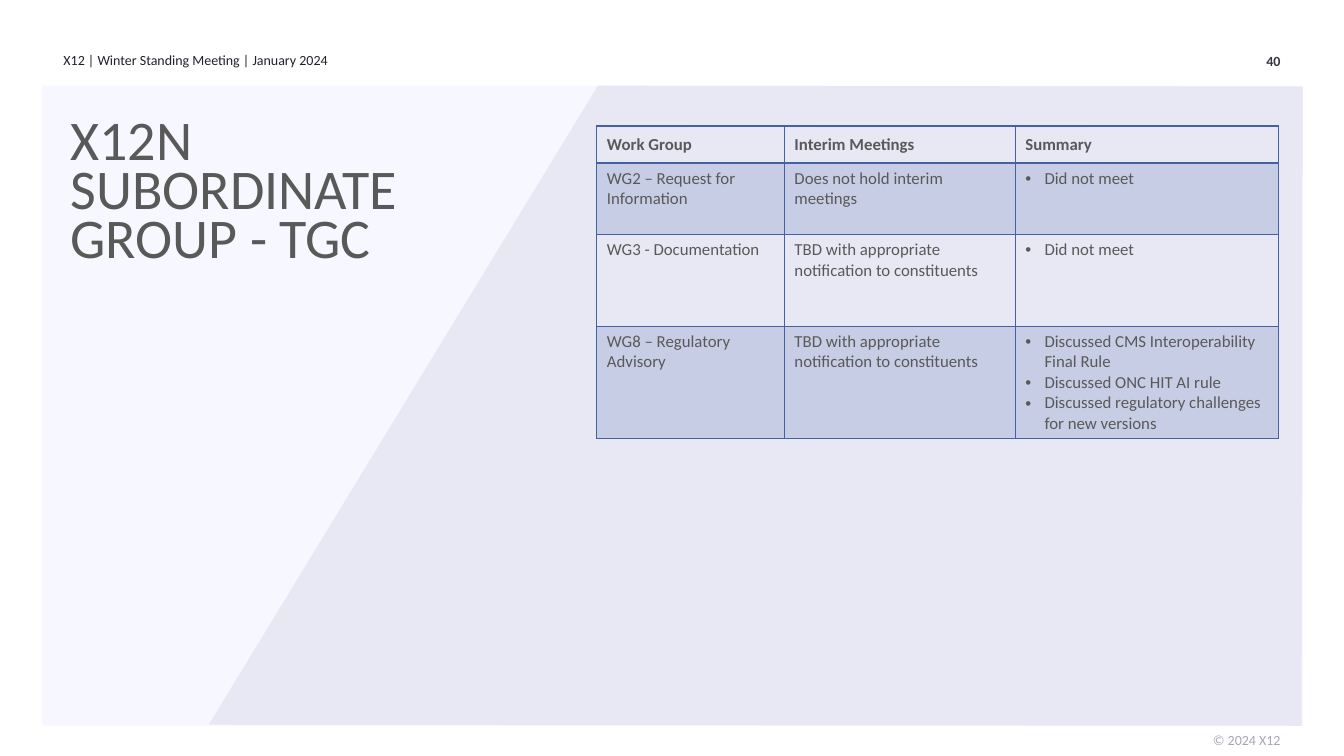
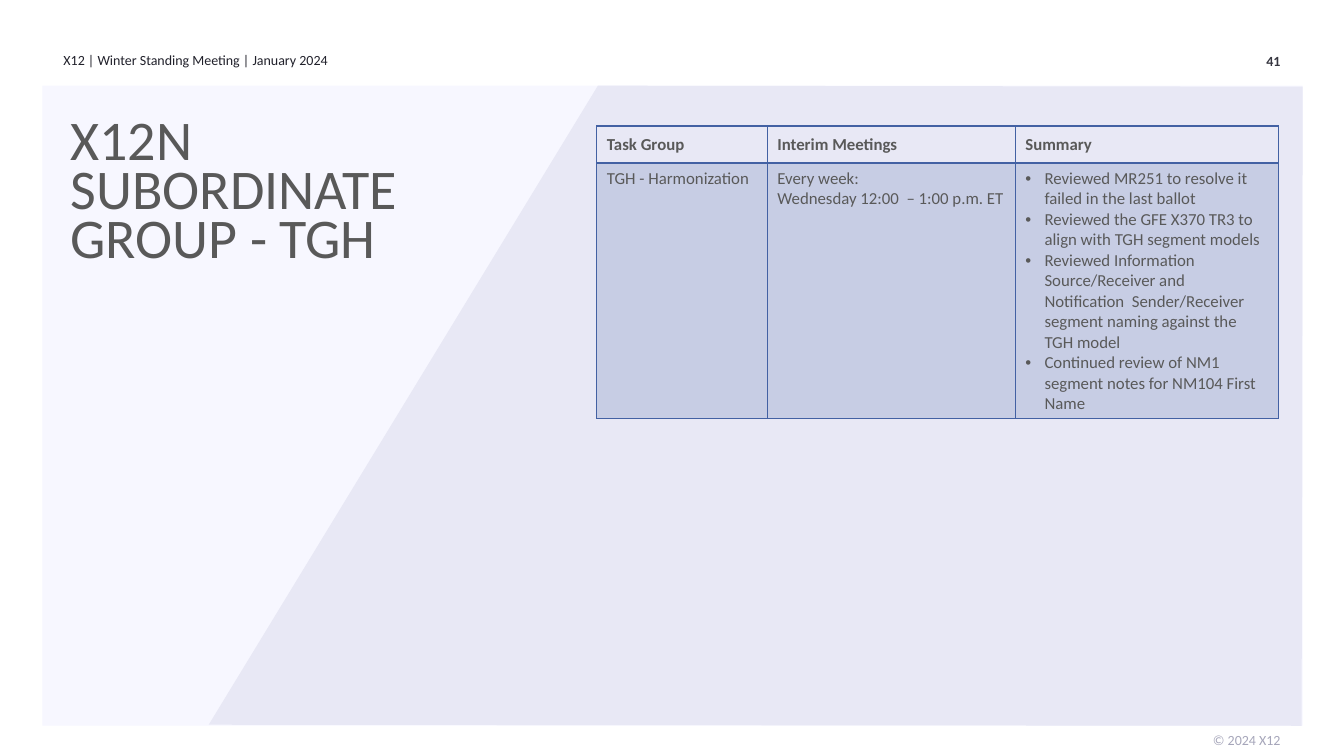
from lxml.etree import SubElement
from pptx import Presentation
from pptx.dml.color import RGBColor
from pptx.enum.shapes import MSO_SHAPE as Shape
from pptx.enum.text import MSO_ANCHOR as Anchor, PP_ALIGN as Align
from pptx.oxml.ns import qn
from pptx.util import Inches, Pt

FONT = "Calibri"
WHITE = RGBColor(0xFF, 0xFF, 0xFF)
PANEL = RGBColor(0xF7, 0xF7, 0xFF)
WEDGE = RGBColor(0xE8, 0xE8, 0xF5)
BLUE = RGBColor(0x43, 0x61, 0xA3)
GREY = RGBColor(0x59, 0x59, 0x59)
INK = RGBColor(0x21, 0x21, 0x2B)
NUMBER_INK = RGBColor(0x36, 0x36, 0x40)
PALE_INK = RGBColor(0xA6, 0xA6, 0xBA)

TITLE_STYLE = {"size": Pt(40), "color": GREY}
HEADER_STYLE = {"size": Pt(10), "color": INK}
NUMBER_STYLE = {"size": Pt(10), "color": NUMBER_INK, "bold": True}
FOOTER_STYLE = {"size": Pt(10), "color": PALE_INK}
HEAD_CELL_STYLE = {"size": Pt(12), "color": GREY, "bold": True}
BODY_CELL_STYLE = {"size": Pt(12), "color": GREY, "bold": False}

PANEL_BOX = (0.42, 0.85, 12.5, 6.35)
TITLE_BOX = (0.7, 1.22, 3.69, 1.9)
HEADER_BOX = (0.63, 0.51, 4.5, 0.25)
NUMBER_BOX = (11.19, 0.52, 1.51, 0.25)
FOOTER_BOX = (11.19, 7.26, 1.51, 0.25)
TABLE_CORNER = (5.92, 1.25)

MEETING = "X12 | Winter Standing Meeting | January 2024"
COPYRIGHT = "© 2024 X12"
TBD = "TBD with appropriate notification to constituents"

# Each cell is a list of paragraphs; the last column is bulleted.
GROUPS = [
    {
        "number": 40,
        "title": "X12N SUBORDINATE GROUP - TGC",
        "heads": ["Work Group", "Interim Meetings", "Summary"],
        "widths": [1.86, 2.29, 2.61],
        "heights": [0.37, 0.71, 0.91, 1.11],
        "rows": [
            [["WG2 – Request for Information"],
             ["Does not hold interim meetings"],
             ["Did not meet"]],
            [["WG3 - Documentation"], [TBD], ["Did not meet"]],
            [["WG8 – Regulatory Advisory"], [TBD],
             ["Discussed CMS Interoperability Final Rule",
              "Discussed ONC HIT AI rule",
              "Discussed regulatory challenges for new versions"]],
        ],
    },
    {
        "number": 41,
        "title": "X12N SUBORDINATE GROUP - TGH",
        "heads": ["Task Group", "Interim Meetings", "Summary"],
        "widths": [1.69, 2.46, 2.61],
        "heights": [0.37, 2.53],
        "rows": [
            [["TGH - Harmonization"],
             ["Every week:", "Wednesday 12:00  – 1:00 p.m. ET"],
             ["Reviewed MR251 to resolve it failed in the last ballot",
              "Reviewed the GFE X370 TR3 to align with TGH segment models",
              "Reviewed Information Source/Receiver and Notification  "
              "Sender/Receiver segment naming against the TGH model",
              "Continued review of NM1 segment notes for NM104 First Name"]],
        ],
    },
]


def style_font(font, style):
    font.name = FONT
    for key, value in style.items():
        if key == "color":
            font.color.rgb = value
        else:
            setattr(font, key, value)


def paint(shape, color):
    shape.shadow.inherit = False
    shape.fill.solid()
    shape.fill.fore_color.rgb = color
    shape.line.fill.background()


def add_label(slide, bounds, text, style, **layout):
    """Add a margin-free text box; layout holds paragraph settings."""
    box = slide.shapes.add_textbox(*map(Inches, bounds))
    frame = box.text_frame
    frame.word_wrap = True
    for side in ("left", "top", "right", "bottom"):
        setattr(frame, f"margin_{side}", 0)
    para = frame.paragraphs[0]
    for key, value in layout.items():
        setattr(para, key, value)
    span = para.add_run()
    span.text = text
    style_font(span.font, style)


def add_backdrop(slide, bounds):
    """Draw the pale panel with a slanted wedge filling its right side."""
    left, top, width, height = bounds
    panel = slide.shapes.add_shape(Shape.RECTANGLE, *map(Inches, bounds))
    paint(panel, PANEL)
    right, bottom = left + width, top + height
    corners = [(left + 1.65, bottom - 0.01), (left + 5.51, top),
               (right, top + 0.01), (right - 0.01, bottom)]
    points = [(Inches(x), Inches(y)) for x, y in corners]
    outline = slide.shapes.build_freeform(*points[0])
    outline.add_line_segments(points[1:], close=True)
    paint(outline.convert_to_shape(), WEDGE)


def add_frame(slide, number):
    """Draw what every slide shares: backdrop, header, number and footer."""
    fill = slide.background.fill
    fill.solid()
    fill.fore_color.rgb = WHITE
    add_backdrop(slide, PANEL_BOX)
    add_label(slide, HEADER_BOX, MEETING, HEADER_STYLE)
    add_label(slide, NUMBER_BOX, str(number), NUMBER_STYLE, alignment=Align.RIGHT)
    add_label(slide, FOOTER_BOX, COPYRIGHT, FOOTER_STYLE, alignment=Align.RIGHT)


def set_borders(cell, **widths):
    """Give the cell blue borders of 1 pt, or of the width named by side."""
    props = cell._tc.get_or_add_tcPr()
    for side in "LRTB":
        width = Pt(widths.get(side, 1))
        line = SubElement(props, qn(f"a:ln{side}"), w=str(width))
        solid = SubElement(line, qn("a:solidFill"))
        SubElement(solid, qn("a:srgbClr"), val=str(BLUE))


def shade(cell):
    """Fill the cell with blue at 20 % opacity."""
    cell.fill.solid()
    cell.fill.fore_color.rgb = BLUE
    color = cell._tc.tcPr.find(f"{qn('a:solidFill')}/{qn('a:srgbClr')}")
    SubElement(color, qn("a:alpha"), val="20000")


def add_bullet(para):
    props = para._p.get_or_add_pPr()
    props.set("marL", str(Inches(0.19)))
    props.set("indent", str(-Inches(0.19)))
    SubElement(props, qn("a:buFont"), typeface="Arial")
    SubElement(props, qn("a:buChar"), char="•")


def write_cell(cell, lines, style, bulleted=False):
    frame = cell.text_frame
    for index, line in enumerate(lines):
        para = frame.add_paragraph() if index else frame.paragraphs[0]
        if bulleted:
            add_bullet(para)
        span = para.add_run()
        span.text = line
        style_font(span.font, style)


def add_group_table(slide, corner, group):
    widths, heights = group["widths"], group["heights"]
    size = (sum(widths), sum(heights))
    table = slide.shapes.add_table(len(heights), len(widths),
                                   *map(Inches, corner + size)).table
    table.first_row = table.horz_banding = False
    for column, width in zip(table.columns, widths):
        column.width = Inches(width)
    for row, height in zip(table.rows, heights):
        row.height = Inches(height)

    for col, head in enumerate(group["heads"]):
        cell = table.cell(0, col)
        set_borders(cell, B=2)
        cell.fill.background()
        cell.vertical_anchor = Anchor.MIDDLE
        write_cell(cell, [head], HEAD_CELL_STYLE)
        cell.text_frame.paragraphs[0].line_spacing = 0.95

    for row, entries in enumerate(group["rows"], start=1):
        for col, lines in enumerate(entries):
            cell = table.cell(row, col)
            set_borders(cell, T=2 if row == 1 else 1)
            if row % 2:
                shade(cell)
            else:
                cell.fill.background()
            write_cell(cell, lines, BODY_CELL_STYLE, bulleted=col == len(widths) - 1)


def add_group_slide(deck, group):
    slide = deck.slides.add_slide(deck.slide_layouts[6])
    add_frame(slide, group["number"])
    add_label(slide, TITLE_BOX, group["title"], TITLE_STYLE, line_spacing=Pt(35))
    add_group_table(slide, TABLE_CORNER, group)


def main():
    deck = Presentation()
    deck.slide_width, deck.slide_height = Inches(13.33), Inches(7.5)
    for group in GROUPS:
        add_group_slide(deck, group)
    deck.save("out.pptx")


if __name__ == "__main__":
    main()
